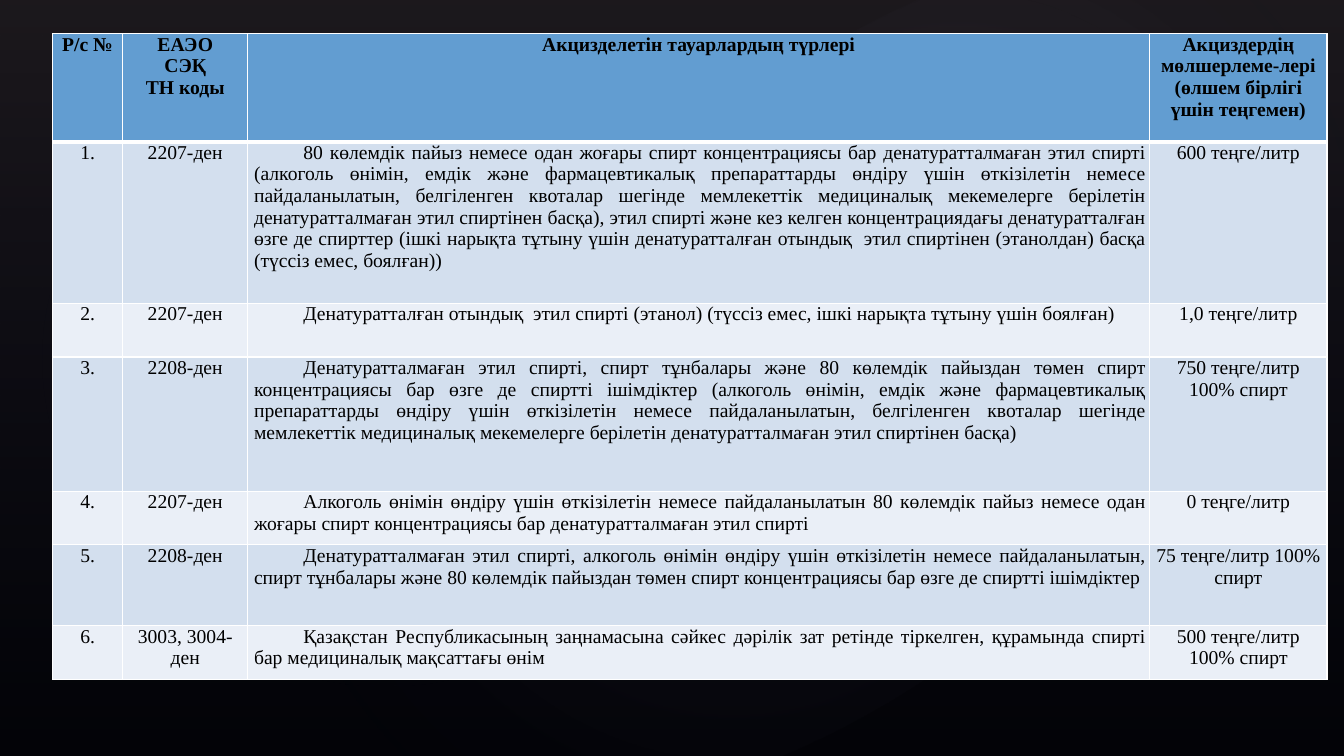
from lxml import etree
from pptx import Presentation
from pptx import util as u
from pptx.dml.color import RGBColor
from pptx.enum import shapes, text
from pptx.oxml import parse_xml
from pptx.oxml.ns import nsdecls, qn

PX = 9525  # EMU per pixel, 96 pixels to the inch
SLIDE_WIDTH, SLIDE_HEIGHT = 1280, 720
FONT = "Times New Roman"
COLORS = {
    "background": "000000",
    "veil": "504652",
    "navy": "242852",
    "glow": "C4BCC6",
    "header": "629DD1",
    "odd row": "D3DFEE",
    "even row": "EAEFF7",
    "border": "FFFFFF",
    "text": "000000",
}

GLOWS = [  # left, top, width, height, rotation, opacity in percent
    (192, 109, 1014, 599, 328.7, 7),
    (59, 44, 582, 627, 294.3, 8),
    (459, 12, 907, 499, 328.7, 8),
]

COLUMN_WIDTHS = [67, 119, 859, 169]
ROW_HEIGHTS = [103, 154, 51, 128, 51, 77, 51]
GOODS_COLUMN = 2
HEADER = [
    "Р/с №",
    "ЕАЭО\nСЭҚ\nТН коды",
    "Акцизделетін тауарлардың түрлері",
    "Акциздердің мөлшерлеме-лері (өлшем бірлігі үшін теңгемен)",
]
EXCISE_RATES = [  # code, goods, rate
    ("2207-ден",
     "80 көлемдік пайыз немесе одан жоғары спирт концентрациясы бар "
     "денатуратталмаған этил спиртi (алкоголь өнiмiн, емдiк және "
     "фармацевтикалық препараттарды өндiру үшiн өткізілетін немесе "
     "пайдаланылатын, белгiленген квоталар шегiнде мемлекеттік медициналық "
     "мекемелерге берiлетiн денатуратталмаған этил спиртiнен басқа), этил "
     "спиртi және кез келген концентрациядағы денатуратталған өзге де "
     "спирттер (iшкi нарықта тұтыну үшін денатуратталған отындық  этил "
     "спиртінен (этанолдан) басқа (түссiз емес, боялған))",
     "600 теңге/литр"),
    ("2207-ден",
     "Денатуратталған отындық  этил спирті (этанол) (түссіз емес, ішкі "
     "нарықта тұтыну үшін боялған)",
     "1,0 теңге/литр"),
    ("2208-ден",
     "Денатуратталмаған этил спирті, спирт тұнбалары және 80 көлемдік "
     "пайыздан төмен спирт концентрациясы бар өзге де спиртті ішімдіктер "
     "(алкоголь өнімін, емдік және фармацевтикалық препараттарды өндіру үшін "
     "өткізілетін немесе пайдаланылатын, белгіленген квоталар шегінде "
     "мемлекеттік медициналық мекемелерге берілетін денатуратталмаған этил "
     "спиртінен басқа)",
     "750 теңге/литр\n100% спирт"),
    ("2207-ден",
     "Алкоголь өнімін өндіру үшін өткізілетін немесе пайдаланылатын 80 "
     "көлемдік пайыз немесе одан жоғары спирт концентрациясы бар "
     "денатуратталмаған этил спирті",
     "0 теңге/литр"),
    ("2208-ден",
     "Денатуратталмаған этил спирті, алкоголь өнімін өндіру үшін "
     "өткізілетін немесе пайдаланылатын, спирт тұнбалары және 80 көлемдік "
     "пайыздан төмен спирт концентрациясы бар өзге де спиртті ішімдіктер",
     "75 теңге/литр 100% спирт"),
    ("3003, 3004-ден",
     "Қазақстан Республикасының заңнамасына сәйкес дәрiлiк зат ретiнде "
     "тіркелген, құрамында спирті бар медициналық мақсаттағы өнім",
     "500 теңге/литр 100% спирт"),
]


def px(*lengths):
    return [length * PX for length in lengths]


def color(name):
    return RGBColor.from_string(COLORS[name])


def add_gradient_shape(slide, kind, box, stops, direction, rotation=0):
    """Stops are (position, colour name, opacity), both numbers in percent."""
    shape = slide.shapes.add_shape(kind, *px(*box))
    shape.rotation = rotation
    shape.shadow.inherit = False
    shape.line.fill.background()
    stop_xml = "".join(
        f'<a:gs pos="{position * 1000}"><a:srgbClr val="{COLORS[name]}">'
        f'<a:alpha val="{opacity * 1000}"/></a:srgbClr></a:gs>'
        for position, name, opacity in stops)
    gradient = parse_xml(f'<a:gradFill {nsdecls("a")} rotWithShape="1">'
                         f"<a:gsLst>{stop_xml}</a:gsLst>{direction}</a:gradFill>")
    shape.element.spPr.find(qn("a:prstGeom")).addnext(gradient)


def add_backdrop(slide):
    slide.background.fill.solid()
    slide.background.fill.fore_color.rgb = color("background")
    add_gradient_shape(slide, shapes.MSO_SHAPE.RECTANGLE,
                       (0, 0, SLIDE_WIDTH, SLIDE_HEIGHT),
                       [(0, "veil", 36), (100, "navy", 10)],
                       '<a:lin ang="5400000" scaled="0"/>')
    centre = ('<a:path path="circle"><a:fillToRect l="50000" t="50000" '
              'r="50000" b="50000"/></a:path>')
    for *box, rotation, opacity in GLOWS:
        add_gradient_shape(slide, shapes.MSO_SHAPE.OVAL, box,
                           [(0, "glow", opacity), (58, "navy", 0)],
                           centre, rotation)


def set_borders(cell, widths):
    """Widths are points for the left, right, top and bottom edges."""
    properties = cell._tc.get_or_add_tcPr()
    for index, (edge, width) in enumerate(zip("LRTB", widths)):
        line = etree.Element(qn(f"a:ln{edge}"), w=str(u.Pt(width)))
        fill = etree.SubElement(line, qn("a:solidFill"))
        etree.SubElement(fill, qn("a:srgbClr"), val=COLORS["border"])
        properties.insert(index, line)


def indent_first_line(paragraph):
    properties = paragraph._p.get_or_add_pPr()
    margin, indent = px(3, 47)
    properties.set("marL", str(margin))
    properties.set("indent", str(indent))


def fill_cell(cell, content, fill, bold, justified):
    cell.margin_left, cell.margin_right, cell.margin_top, cell.margin_bottom = px(3, 3, 0, 0)
    cell.fill.solid()
    cell.fill.fore_color.rgb = color(fill)
    cell.text_frame.text = content
    for paragraph in cell.text_frame.paragraphs:
        paragraph.alignment = text.PP_ALIGN.JUSTIFY if justified else text.PP_ALIGN.CENTER
        if justified:
            indent_first_line(paragraph)
        for run in paragraph.runs:
            run.font.name = FONT
            run.font.size = u.Pt(14)
            run.font.bold = bold
            run.font.color.rgb = color("text")


def add_excise_table(slide):
    rows = [HEADER] + [(f"{number}.", *rate)
                       for number, rate in enumerate(EXCISE_RATES, 1)]
    box = px(50, 32, sum(COLUMN_WIDTHS), sum(ROW_HEIGHTS))
    table = slide.shapes.add_table(len(rows), len(HEADER), *box).table
    for column, width in zip(table.columns, px(*COLUMN_WIDTHS)):
        column.width = width
    for row, height in zip(table.rows, px(*ROW_HEIGHTS)):
        row.height = height
    for row_index, row in enumerate(rows):
        is_header = row_index == 0
        fill = "header" if is_header else "odd row" if row_index % 2 else "even row"
        for column_index, content in enumerate(row):
            cell = table.cell(row_index, column_index)
            justified = column_index == GOODS_COLUMN and not is_header
            fill_cell(cell, content, fill, is_header, justified)
            set_borders(cell, (1, 1, 3 if row_index == 1 else 1, 3 if is_header else 1))


def main():
    presentation = Presentation()
    presentation.slide_width, presentation.slide_height = px(SLIDE_WIDTH, SLIDE_HEIGHT)
    slide = presentation.slides.add_slide(presentation.slide_layouts[6])
    add_backdrop(slide)
    add_excise_table(slide)
    presentation.save("out.pptx")


if __name__ == "__main__":
    main()
